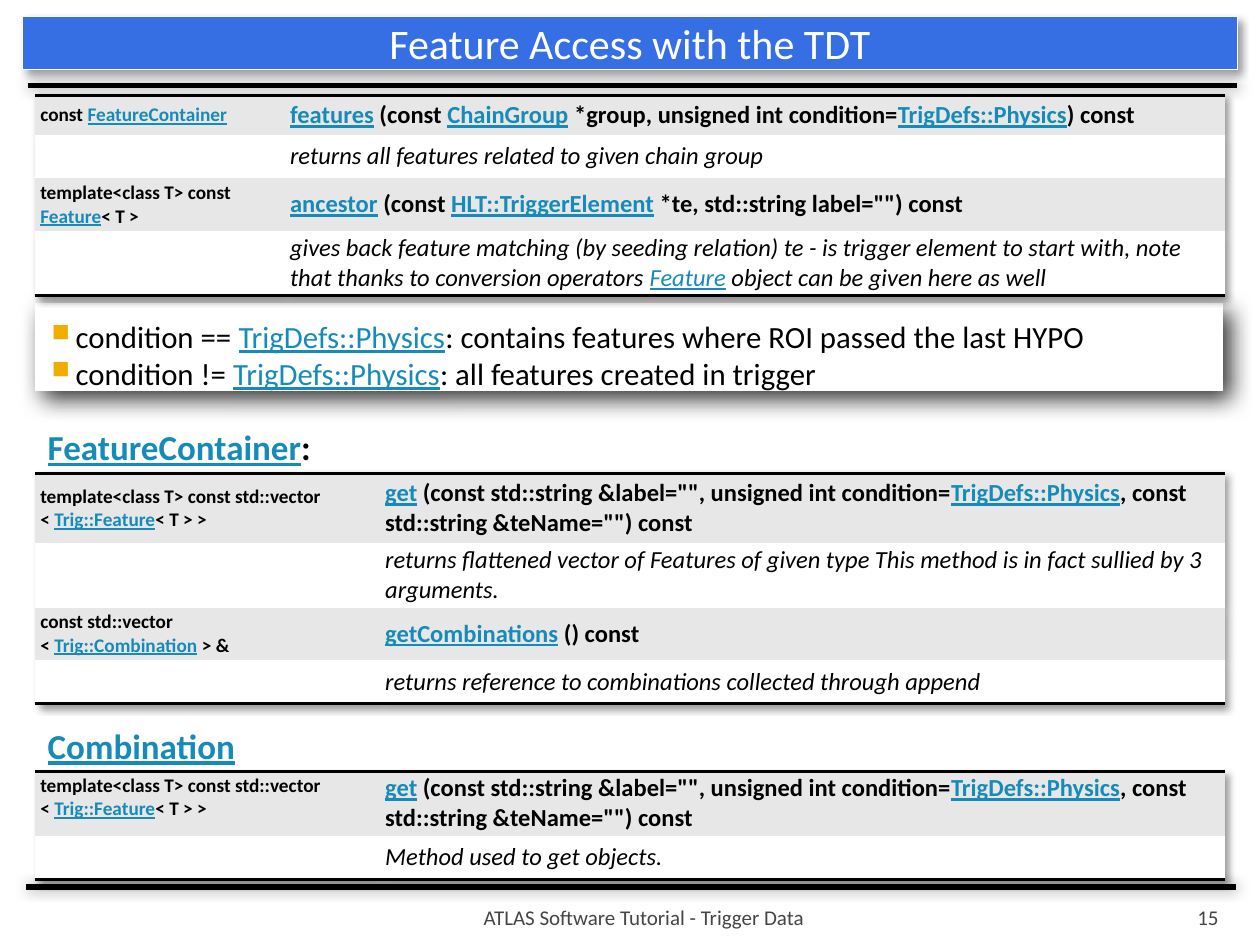
from copy import deepcopy

from lxml import etree
from pptx import Presentation, util as u
from pptx.dml.color import RGBColor
from pptx.enum import shapes, text
from pptx.oxml import ns

BLACK = RGBColor(0x00, 0x00, 0x00)
WHITE = RGBColor(0xFF, 0xFF, 0xFF)
BLUE = RGBColor(0x35, 0x6F, 0xE3)
LINK = RGBColor(0x16, 0x8B, 0xBA)
BAND = RGBColor(0xE7, 0xE7, 0xE7)
GREY = RGBColor(0x45, 0x45, 0x45)
GOLD = RGBColor(0xF0, 0xAD, 0x00)

LEFT, WIDTH = 0.28, 9.44
NO_STYLE = "{2D5ABB26-0587-4C30-8999-92F81FD0307C}"
MIDDLE, BOTTOM, TOP = (text.MSO_ANCHOR.MIDDLE, text.MSO_ANCHOR.BOTTOM,
                       text.MSO_ANCHOR.TOP)

GET = ('|get| (const std::string &label="", unsigned int condition='
       '|TrigDefs::Physics|, const std::string &teName="") const')
VECTOR = "template<class T> const std::vector\n< |Trig::Feature|< T > >"

# Each row: return type, signature, description; bars enclose links.
ACCESS = [
    ("const |FeatureContainer|",
     "|features| (const |ChainGroup| *group, unsigned int condition="
     "|TrigDefs::Physics|) const",
     "returns all features related to given chain group"),
    ("template<class T> const |Feature|< T >",
     '|ancestor| (const |HLT::TriggerElement| *te, std::string label="") const',
     "gives back feature matching (by seeding relation) te - is trigger element "
     "to start with, note that thanks to conversion operators |Feature| object "
     "can be given here as well"),
]
CONTAINER = [
    (VECTOR, GET, "returns flattened vector of Features of given type This "
     "method is in fact sullied by 3 arguments."),
    ("const std::vector\n< |Trig::Combination| > &",
     "|getCombinations| () const",
     "returns reference to combinations collected through append"),
]
COMBINATION = [(VECTOR, GET, "Method used to get objects.")]
CONDITIONS = [
    "condition == |TrigDefs::Physics|: contains features where ROI passed the last HYPO",
    "condition != |TrigDefs::Physics|: all features created in trigger",
]


def sub(parent, tag, **attrs):
    return etree.SubElement(parent, ns.qn(tag), attrs)


def add_shadow(props, alpha, blur, dist, angle):
    """Append an outer black shadow; alpha in percent, lengths in points."""
    for old in props.findall(ns.qn("a:effectLst")):
        props.remove(old)
    effects = sub(props, "a:effectLst")
    outer = sub(effects, "a:outerShdw", blurRad=str(int(u.Pt(blur))),
                dist=str(int(u.Pt(dist))), dir=str(angle * 60000),
                algn="ctr", rotWithShape="0")
    color = sub(outer, "a:srgbClr", val=str(BLACK))
    sub(color, "a:alpha", val=str(alpha * 1000))
    return effects


def write(p, marked, size, color=BLACK, **font):
    """Write text in which bars enclose links and newlines break lines."""
    for i, part in enumerate(marked.split("|")):
        is_link = i % 2 == 1
        for j, line in enumerate(part.split("\n")):
            if j:
                p.add_line_break()
                p._p[-1].append(deepcopy(r._r.rPr))
            if not line:
                continue
            r = p.add_run()
            r.text = line
            r.font.color.rgb = LINK if is_link else color
            formats = dict(size=u.Pt(size), name="Calibri", underline=is_link)
            for key, value in {**formats, **font}.items():
                setattr(r.font, key, value)


def set_frame(tf, insets, anchor=TOP, wrap=True):
    sides = ("margin_left", "margin_top", "margin_right", "margin_bottom")
    for side, inset in zip(sides, insets):
        setattr(tf, side, u.Inches(inset))
    tf.vertical_anchor, tf.word_wrap = anchor, wrap
    tf.auto_size = text.MSO_AUTO_SIZE.NONE


def paint(sp, fill):
    sp.fill.solid()
    sp.fill.fore_color.rgb = fill
    sp.line.color.rgb, sp.line.width = WHITE, u.Pt(0.75)


def add_title(s, box, title):
    sp = s.shapes.title
    sp.left, sp.top, sp.width, sp.height = map(u.Inches, box)
    paint(sp, BLUE)
    add_shadow(sp._element.spPr, 40, 4, 3, 45)
    set_frame(sp.text_frame, (0.1, 0.05, 0.1, 0.05), MIDDLE)
    p = sp.text_frame.paragraphs[0]
    p.alignment = text.PP_ALIGN.CENTER
    write(p, title, 24, WHITE)


def add_rule(s, x, y, width):
    line = s.shapes.add_connector(shapes.MSO_CONNECTOR.STRAIGHT,
                                  *map(u.Inches, (x, y, x + width, y)))
    line.line.color.rgb, line.line.width = BLACK, u.Pt(3)
    add_shadow(line._element.spPr, 50, 7.5, 0, 0)


def add_label(s, box, marked, size, color=BLACK, align=text.PP_ALIGN.LEFT,
              insets=(0.1, 0.05, 0.1, 0.05), anchor=TOP, wrap=False, **font):
    tf = s.shapes.add_textbox(*map(u.Inches, box)).text_frame
    set_frame(tf, insets, anchor, wrap)
    tf.paragraphs[0].alignment = align
    write(tf.paragraphs[0], marked, size, color, **font)


def add_bullets(s, box, items):
    sp = s.shapes.add_shape(shapes.MSO_SHAPE.RECTANGLE, *map(u.Inches, box))
    paint(sp, WHITE)
    add_shadow(sp._element.spPr, 78, 13, 6, 45)
    tf = sp.text_frame
    set_frame(tf, (0.06, 0.11, 0.1, 0.05))
    for i, item in enumerate(items):
        p = tf.add_paragraph() if i else tf.paragraphs[0]
        p.alignment = text.PP_ALIGN.LEFT
        props = p._p.get_or_add_pPr()
        props.set("marL", str(u.Inches(0.26)))
        props.set("indent", str(u.Inches(-0.19)))
        sub(sub(props, "a:buClr"), "a:srgbClr", val=str(GOLD))
        sub(props, "a:buSzPct", val="80000")
        sub(props, "a:buChar", char="■")
        write(p, item, 17.6)


def add_border(cell, tag):
    border = etree.Element(ns.qn(tag), w=str(u.Pt(2)))
    sub(sub(border, "a:solidFill"), "a:srgbClr", val=str(BLACK))
    cell._tc.get_or_add_tcPr().insert(0, border)


def add_methods(s, top, share, heights, methods, anchors=(MIDDLE, MIDDLE)):
    """Table of methods: a grey signature row, then a white description row."""
    frame = s.shapes.add_table(len(heights), 2, *map(
        u.Inches, (LEFT, top, WIDTH, sum(heights))))
    table = frame.table
    table.first_row = table.horz_banding = False
    props = table._tbl.tblPr
    props[0].text = NO_STYLE
    props.insert(0, add_shadow(props, 40, 4, 3, 45))
    for col, part in zip(table.columns, (share, 1 - share)):
        col.width = u.Inches(WIDTH * part)
    for row, height in zip(table.rows, heights):
        row.height = u.Inches(height)

    for i, (returns, signature, description) in enumerate(methods):
        rows = [(returns, signature), ("", description)]
        for j, contents in enumerate(rows):
            for k, content in enumerate(contents):
                cell = table.cell(2 * i + j, k)
                cell.fill.solid()
                cell.fill.fore_color.rgb = WHITE if j else BAND
                cell.vertical_anchor = MIDDLE if j else anchors[k]
                cell.margin_left = cell.margin_right = u.Inches(0.04)
                cell.margin_top = cell.margin_bottom = u.Inches(0.02)
                p = cell.text_frame.paragraphs[0]
                write(p, content, 14 if k else 11, bold=not j, italic=bool(j))
    for k in range(2):
        add_border(table.cell(0, k), "a:lnT")
        add_border(table.cell(len(heights) - 1, k), "a:lnB")


def add_footer(s, top, caption, number):
    add_label(s, (2.1, top, 6.02, 0.3), caption, 12, GREY,
              text.PP_ALIGN.CENTER, (0.05, 0.05, 0.05, 0), BOTTOM, True)
    add_label(s, (8.97, top, 0.8, 0.3), number, 12, GREY,
              text.PP_ALIGN.RIGHT, (0.1, 0.05, 0.1, 0), BOTTOM, True)


def main():
    prs = Presentation()
    prs.slide_width, prs.slide_height = u.Inches(10), u.Inches(7.5)
    s = prs.slides.add_slide(prs.slide_layouts[5])
    add_rule(s, 0.22, 0.68, 9.6)
    add_rule(s, 0.21, 7.04, 9.6)
    add_bullets(s, (LEFT, 2.41, 9.42, 0.69), CONDITIONS)
    add_footer(s, 7.08, "ATLAS Software Tutorial - Trigger Data", "15")
    add_title(s, (0.18, 0.13, 9.64, 0.42), "Feature Access with the TDT")
    add_methods(s, 0.76, 0.21, (0.31, 0.34, 0.4, 0.5), ACCESS)
    add_label(s, (LEFT, 3.33, 2.41, 0.44), "|FeatureContainer|:", 20, bold=True)
    add_methods(s, 3.76, 0.29, (0.55, 0.51, 0.4, 0.34), CONTAINER)
    add_label(s, (LEFT, 5.7, 1.78, 0.44), "|Combination|", 20, bold=True)
    add_methods(s, 6.12, 0.29, (0.51, 0.34), COMBINATION, (TOP, BOTTOM))
    prs.save("out.pptx")


if __name__ == "__main__":
    main()
